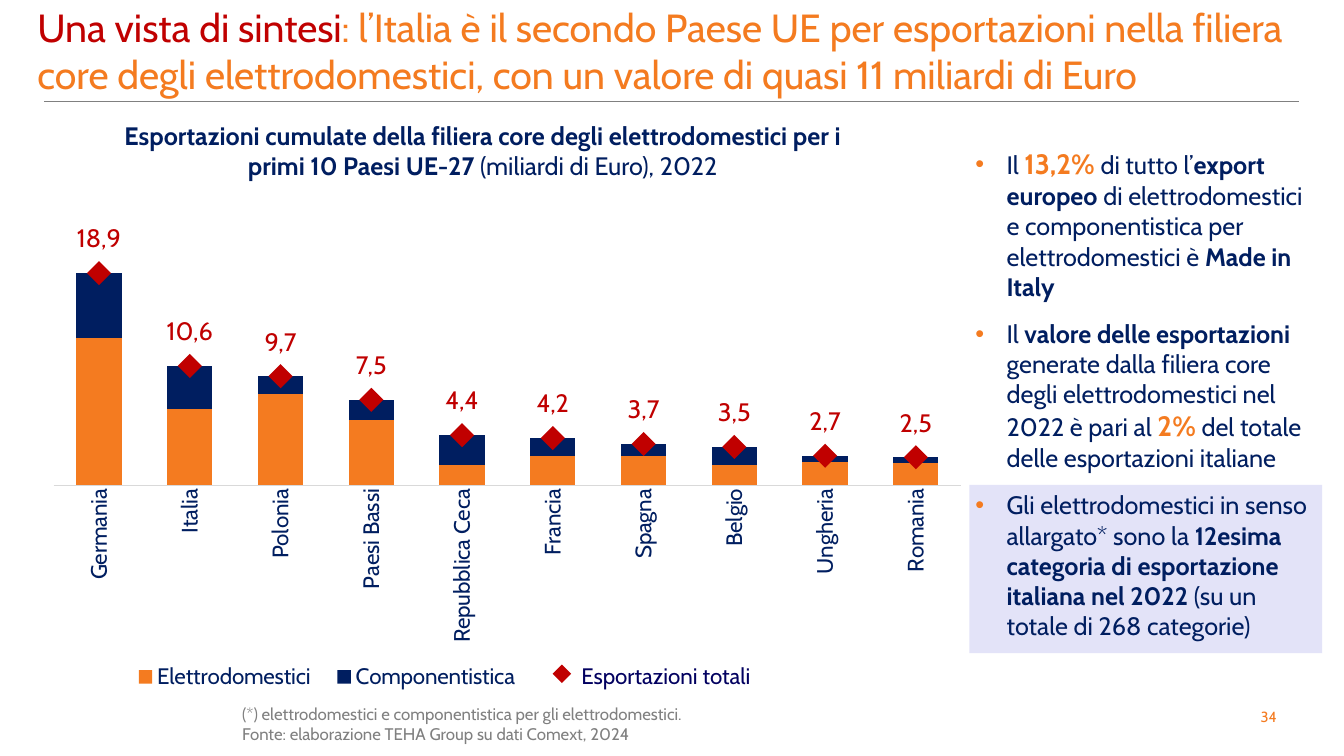
from lxml import etree
from pptx import Presentation
from pptx.chart.data import CategoryChartData
from pptx.dml.color import RGBColor
from pptx.enum.chart import XL_CHART_TYPE as ChartType, XL_LEGEND_POSITION as LegendPos
from pptx.enum.chart import XL_TICK_MARK as TickMark
from pptx.enum.shapes import MSO_CONNECTOR as Connector, MSO_SHAPE as Shape
from pptx.enum.text import MSO_ANCHOR as Anchor, MSO_AUTO_SIZE as AutoSize, PP_ALIGN as Align
from pptx.oxml.ns import qn
from pptx.util import Cm, Pt

COLORS = {"orange": "F47B20", "navy": "001E60", "red": "C00000", "grey": "808080",
          "axis": "D9D9D9", "lilac": "E3E3F8", "legend": "020060"}
FONT = "Cabin"

# Country, appliances, components, total label
EXPORTS = [
    ("Germania", 100, 44, "18,9"), ("Italia", 52, 29, "10,6"),
    ("Polonia", 62, 12, "9,7"), ("Paesi Bassi", 44, 14, "7,5"),
    ("Repubblica Ceca", 14, 20, "4,4"), ("Francia", 20, 12, "4,2"),
    ("Spagna", 20, 8, "3,7"), ("Belgio", 14, 12, "3,5"),
    ("Ungheria", 16, 4, "2,7"), ("Romania", 15, 4, "2,5"),
]
AXIS_MAX = 152.5

# Chart frame in cm; plot and legend as fractions of the frame
CHART = (0.64, 5.82, 23.75, 11.89)
PLOT = (0.03, 0.063, 0.963, 0.476)
LEGEND = (0.1, 0.905, 0.44, 0.08)
MARKER = 0.43

BOLD = {"bold": True}
KEY_FIGURE = {"bold": True, "size": 20, "color": "orange"}
FINDINGS = [
    [("Il ", {}), ("13,2%", KEY_FIGURE), (" di tutto l’", {}), ("export europeo", BOLD),
     (" di elettrodomestici e componentistica per elettrodomestici è ", {}),
     ("Made in Italy", BOLD)],
    [("Il ", {}), ("valore delle esportazioni ", BOLD),
     ("generate dalla filiera core degli elettrodomestici nel 2022 è pari al ", {}),
     ("2%", KEY_FIGURE), (" del totale delle esportazioni italiane", {})],
    [("Gli elettrodomestici in senso allargato* sono la ", {}),
     ("12esima categoria di esportazione italiana nel 2022 ", BOLD),
     ("(su un totale di 268 categorie)", {})],
]


def rgb(name):
    return RGBColor.from_string(COLORS[name])


class SlideBuilder:
    def __init__(self, slide, font):
        self.slide = slide
        self.font = font

    def style(self, font, size=None, color=None, bold=None):
        if size:
            font.size = Pt(size)
        if color:
            font.color.rgb = rgb(color)
        if bold is not None:
            font.bold = bold

    def compose(self, paragraph, runs, size, color, align=Align.LEFT):
        paragraph.alignment = align
        paragraph.font.name = self.font
        self.style(paragraph.font, size, color)
        for words, changes in runs:
            for number, line in enumerate(words.split("\n")):
                if number:
                    paragraph.add_line_break()
                run = paragraph.add_run()
                run.text = line
                self.style(run.font, **changes)

    def title(self, box, runs, size, color):
        heading = self.slide.shapes.title
        heading.left, heading.top, heading.width, heading.height = map(Cm, box)
        frame = heading.text_frame
        frame.word_wrap, frame.auto_size = True, AutoSize.NONE
        frame.vertical_anchor = Anchor.MIDDLE
        self.compose(frame.paragraphs[0], runs, size, color)

    def text(self, box, paragraphs, size, color, align=Align.LEFT, anchor=Anchor.MIDDLE,
             bullets=False):
        frame = self.slide.shapes.add_textbox(*map(Cm, box)).text_frame
        frame.word_wrap = True
        frame.vertical_anchor = anchor
        for number, runs in enumerate(paragraphs):
            paragraph = frame.add_paragraph() if number else frame.paragraphs[0]
            if bullets:
                self.bullet(paragraph, "orange")
                paragraph.space_before = Pt(6 if number else 0)
                paragraph.space_after = Pt(6)
            self.compose(paragraph, runs, size, color, align)
        return frame

    def bullet(self, paragraph, color):
        props = paragraph._p.get_or_add_pPr()
        props.set("marL", str(Cm(0.79)))
        props.set("indent", str(-Cm(0.79)))
        bullet_color = etree.SubElement(props, qn("a:buClr"))
        etree.SubElement(bullet_color, qn("a:srgbClr"), val=COLORS[color])
        etree.SubElement(props, qn("a:buFont"), typeface="Arial")
        etree.SubElement(props, qn("a:buChar"), char="•")

    def rectangle(self, box, color, rotation=0):
        block = self.slide.shapes.add_shape(Shape.RECTANGLE, *map(Cm, box))
        block.shadow.inherit = False
        block.fill.solid()
        block.fill.fore_color.rgb = rgb(color)
        block.line.fill.background()
        block.rotation = rotation

    def diamond(self, x, y, side):
        self.rectangle((x - side / 2, y - side / 2, side, side), "red", 45)

    def rule(self, x1, x2, y, color):
        line = self.slide.shapes.add_connector(Connector.STRAIGHT, Cm(x1), Cm(y), Cm(x2), Cm(y))
        line.line.color.rgb = rgb(color)
        line.line.width = Pt(0.75)
        etree.SubElement(line._element.spPr, qn("a:effectLst"))

    def place(self, element, fractions, inner=False):
        """Give a chart part (plot area or legend) a fixed place."""
        for old in element.findall(qn("c:layout")):
            element.remove(old)
        layout = etree.Element(qn("c:layout"))
        manual = etree.SubElement(layout, qn("c:manualLayout"))
        settings = [("layoutTarget", "inner")] if inner else []
        settings += [("xMode", "edge"), ("yMode", "edge"), *zip("xywh", fractions)]
        for tag, value in settings:
            etree.SubElement(manual, qn("c:" + tag), val=str(value))
        element.insert(0 if inner else 1, layout)

    def stacked_columns(self, box, categories, series):
        data = CategoryChartData(number_format="0")
        data.categories = categories
        for name, values, _ in series:
            data.add_series(name, values)
        chart = self.slide.shapes.add_chart(
            ChartType.COLUMN_STACKED, *map(Cm, box), data).chart
        chart.has_title = False
        chart.font.name = self.font
        self.style(chart.font, 16, "navy")
        columns = chart.plots[0]
        columns.gap_width, columns.overlap = 100, 100
        columns.vary_by_categories = False
        for drawn, (_, _, color) in zip(columns.series, series):
            drawn.format.fill.solid()
            drawn.format.fill.fore_color.rgb = rgb(color)

        values = chart.value_axis
        values.minimum_scale, values.maximum_scale = 0, AXIS_MAX
        values.has_major_gridlines = False
        values.visible = False
        countries = chart.category_axis
        countries.major_tick_mark = TickMark.NONE
        countries.format.line.color.rgb = rgb("axis")
        countries.format.line.width = Pt(0.75)
        countries.tick_labels.font.name = self.font
        self.style(countries.tick_labels.font, 16, "navy")
        label_body = countries._element.find(qn("c:txPr")).find(qn("a:bodyPr"))
        label_body.set("rot", "-5400000")
        label_body.set("vert", "horz")

        chart.has_legend = True
        chart.legend.position = LegendPos.BOTTOM
        chart.legend.include_in_layout = False
        self.place(chart.legend._element, LEGEND)
        self.place(chart._chartSpace.chart.plotArea, PLOT, inner=True)


def main():
    deck = Presentation()
    deck.slide_width, deck.slide_height = Cm(33.87), Cm(19.05)
    page = SlideBuilder(deck.slides.add_slide(deck.slide_layouts[5]), FONT)

    # Heading, rule and page number
    page.rule(1.12, 32.74, 2.56, "grey")
    page.text((31.39, 17.68, 1.17, 0.74), [[("34", {})]], 10.5, "orange", Align.CENTER)
    page.title((0.69, 0.46, 32.49, 1.6), [
        ("Una vista di sintesi", {"color": "red"}),
        (": l’Italia è il secondo Paese UE per esportazioni nella filiera core degli "
         "elettrodomestici, con un valore di quasi 11 miliardi di Euro", {})], 28, "orange")

    # Chart with its heading
    page.text((2.79, 2.9, 18.75, 1.8), [[
        ("Esportazioni cumulate della filiera core degli elettrodomestici per i primi 10 "
         "Paesi UE-27 ", BOLD), ("(miliardi di Euro), 2022", {})]], 18, "navy", Align.CENTER)
    countries, appliances, components, _ = zip(*EXPORTS)
    page.stacked_columns(CHART, countries, [("Elettrodomestici", appliances, "orange"),
                                            ("Componentistica", components, "navy")])

    # Total marker and label above each column
    left, top, width, height = CHART
    step = PLOT[2] * width / len(EXPORTS)
    plot_height = PLOT[3] * height
    baseline = top + PLOT[1] * height + plot_height
    for column, (_, appliance, component, total) in enumerate(EXPORTS):
        x = left + PLOT[0] * width + (column + 0.5) * step
        y = baseline - (appliance + component) / AXIS_MAX * plot_height
        page.text((x - 0.93, y - 1.26, 1.86, 0.74), [[(total, {})]], 18, "red", Align.CENTER)
        page.diamond(x, y, MARKER)

    # Legend entry for the totals
    page.diamond(14.16, 16.98, 0.33)
    page.text((14.4, 16.66, 5.54, 0.74), [[("Esportazioni totali", {})]], 16, "legend")

    # Findings, the last one highlighted
    page.rectangle((24.43, 12.22, 8.89, 4.24), "lilac")
    page.text((24.33, 3.51, 8.86, 12.83), FINDINGS, 18, "navy", bullets=True)

    # Note and source
    note = page.text((5.82, 17.58, 20.27, 1.32), [[
        ("(*) elettrodomestici e componentistica per gli elettrodomestici.\n"
         "Fonte: elaborazione TEHA Group su dati Comext, 2024", {})]],
        12, "grey", anchor=Anchor.TOP)
    note.margin_left = note.margin_right = Cm(0.28)
    note.margin_top = note.margin_bottom = Cm(0.15)

    deck.save("out.pptx")


if __name__ == "__main__":
    main()
